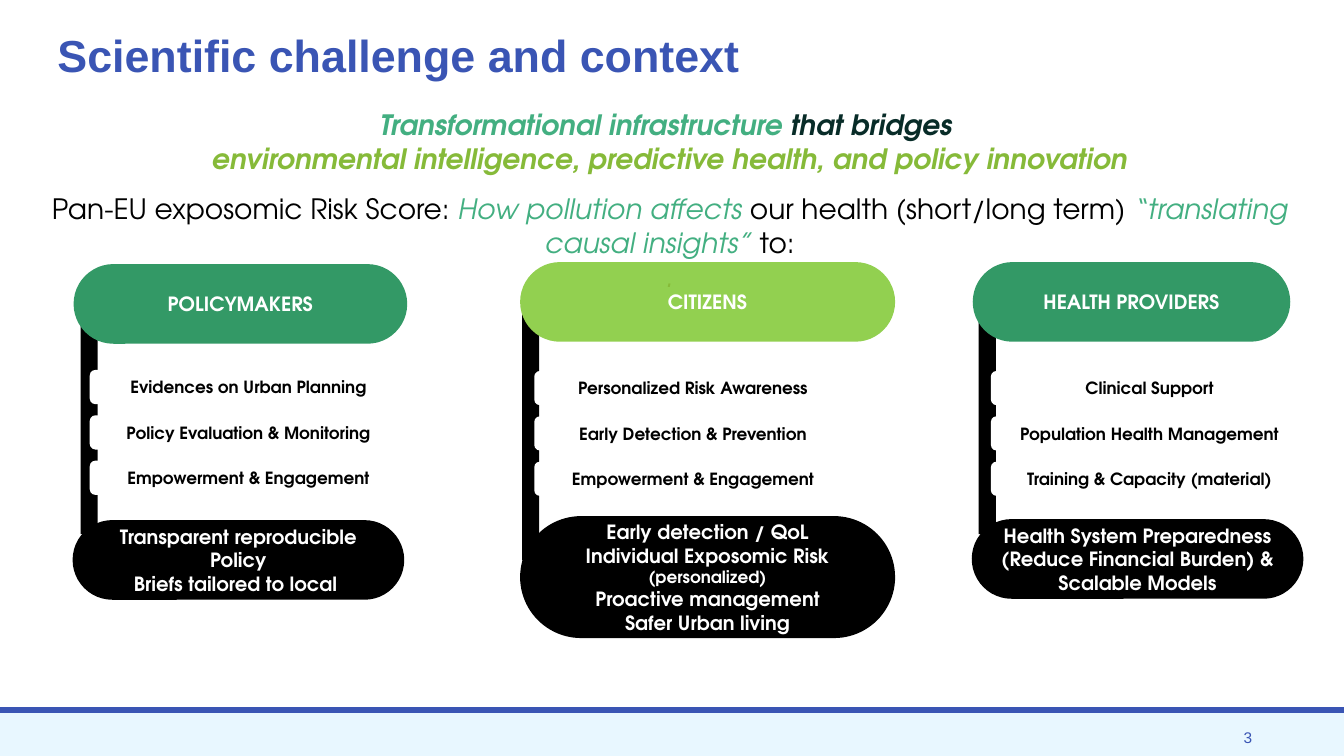
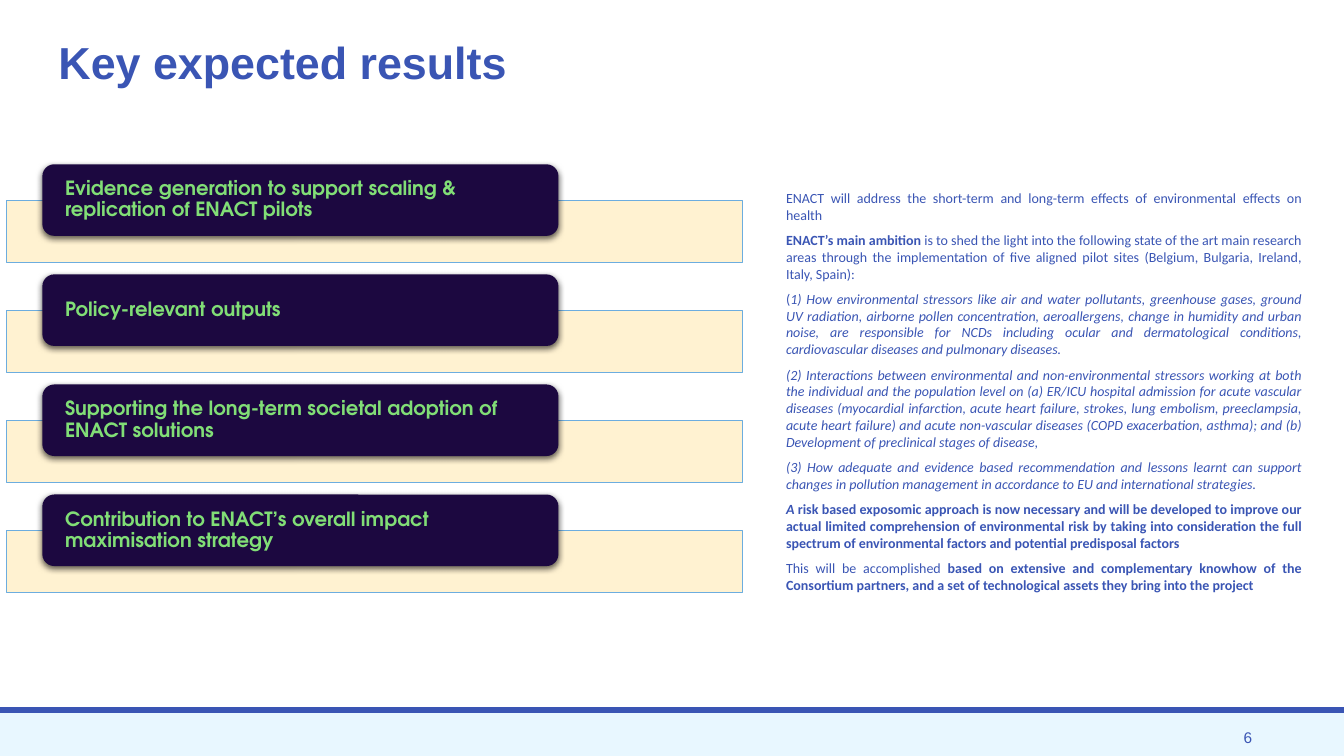
import dataclasses

import lxml.etree
import pptx
import pptx.dml.color
import pptx.enum.shapes
import pptx.enum.text
import pptx.oxml.ns
import pptx.util

SHAPE = pptx.enum.shapes.MSO_SHAPE
ALIGN = pptx.enum.text.PP_ALIGN
ANCHOR = pptx.enum.text.MSO_ANCHOR
CELLS_PER_INCH = 10
COLS, ROWS = 133.33, 75


@dataclasses.dataclass(frozen=True)
class Theme:
    blue: str = "3A55B4"
    pale_blue: str = "E8F7FF"
    black: str = "000000"
    white: str = "FFFFFF"
    green: str = "339966"
    lime: str = "92D050"
    teal: str = "43AF81"
    dark_teal: str = "082C28"
    olive: str = "86BA39"
    cream: str = "FFF1CC"
    sky: str = "6CADDF"
    night: str = "1C0840"
    mint: str = "81DE76"
    title_font: str = "Arial"
    display_font: str = "TeX Gyre Adventor"
    body_font: str = "Calibri"
    title_size: int = 32
    lead_size: int = 20
    label_size: int = 14
    item_size: int = 12
    number_size: int = 11
    body_size: int = 10


THEME = Theme()


def grid(*cells):
    """Turn grid cells into slide lengths."""
    return [pptx.util.Inches(n / CELLS_PER_INCH) for n in cells]


def rgb(color):
    return pptx.dml.color.RGBColor.from_string(color)


def add_xml(parent, tag, **attributes):
    return lxml.etree.SubElement(parent, pptx.oxml.ns.qn(tag), attributes)


class Deck:
    """Holds the theme, the presentation and the slide being built."""

    def __init__(self, theme):
        self.theme = theme
        self.prs = pptx.Presentation()
        self.prs.slide_width, self.prs.slide_height = grid(COLS, ROWS)
        self.s = None

    def slide(self, title, number, title_at):
        t = self.theme
        self.s = self.prs.slides.add_slide(self.prs.slide_layouts[6])
        self.box((0, 70.6, COLS, 4.4), t.pale_blue)
        self.box((0, 70.2, COLS, 0.5), t.blue, line=(t.blue, 1))
        self.text((96.8, 71.7, 28.4, 3), [number], align=ALIGN.RIGHT,
                  font=t.title_font, size=t.number_size, color=t.blue)
        self.text((*title_at, 118.4, 5.3), [title], anchor=ANCHOR.MIDDLE,
                  inset=0, spacing=0.9, font=t.title_font,
                  size=t.title_size, color=t.blue, bold=True)

    def box(self, at, fill, kind=SHAPE.RECTANGLE, line=None, round_ends=False,
            opacity=None):
        sp = self.s.shapes.add_shape(kind, *grid(*at))
        sp.shadow.inherit = False
        sp.fill.solid()
        sp.fill.fore_color.rgb = rgb(fill)
        if line:
            color, width = line
            sp.line.color.rgb = rgb(color)
            sp.line.width = pptx.util.Pt(width)
        else:
            sp.line.fill.background()
        if round_ends:
            sp.adjustments[0] = 0.5
        if opacity:
            fill_xml = sp._element.spPr.find(pptx.oxml.ns.qn("a:solidFill"))
            add_xml(fill_xml[0], "a:alpha", val=str(opacity * 1000))
        return sp

    def label(self, at, fill, paragraphs, color, size, round_ends=False):
        """Rounded box with centred bold text."""
        sp = self.box(at, fill, SHAPE.ROUNDED_RECTANGLE, round_ends=round_ends)
        self.fill_text(sp.text_frame, paragraphs, align=ALIGN.CENTER,
                       anchor=ANCHOR.MIDDLE, font=self.theme.display_font,
                       size=size, color=color, bold=True)

    def card(self, at, text):
        """Rounded box with left-aligned text and a soft shadow below."""
        t = self.theme
        sp = self.box(at, t.night, SHAPE.ROUNDED_RECTANGLE)
        effects = sp._element.spPr.find(pptx.oxml.ns.qn("a:effectLst"))
        shadow = add_xml(effects, "a:outerShdw", blurRad=str(pptx.util.Pt(4.5)),
                         dist=str(pptx.util.Pt(1.5)), dir="5400000",
                         algn="ctr", rotWithShape="0")
        color = add_xml(shadow, "a:srgbClr", val=t.black)
        add_xml(color, "a:alpha", val="63000")
        self.fill_text(sp.text_frame, [text], anchor=ANCHOR.MIDDLE, inset=1.9,
                       spacing=0.9, font=t.display_font, size=t.label_size,
                       color=t.mint, bold=True)

    def text(self, at, paragraphs, **style):
        tb = self.s.shapes.add_textbox(*grid(*at))
        self.fill_text(tb.text_frame, paragraphs, **style)

    def fill_text(self, tf, paragraphs, align=ALIGN.LEFT, anchor=ANCHOR.TOP,
                  inset=None, spacing=None, before=None, after=None, **font):
        """Fill a frame; a paragraph is a string or a list of (text, changes).

        before maps a paragraph's index to the points above it.
        """
        tf.word_wrap = True
        tf.vertical_anchor = anchor
        if inset is not None:
            tf.margin_left = tf.margin_right = grid(inset)[0]
            tf.margin_top = tf.margin_bottom = 0
        for i, runs in enumerate(paragraphs):
            p = tf.paragraphs[0] if i == 0 else tf.add_paragraph()
            p.alignment = align
            if spacing:
                p.line_spacing = spacing
            if before and i in before:
                p.space_before = pptx.util.Pt(before[i])
            if after:
                p.space_after = pptx.util.Pt(after)
            if isinstance(runs, str):
                runs = [(runs, {})]
            for text, changes in runs:
                self.run(p, text, **{**font, **changes})

    def run(self, p, text, font, size, color, bold=False, italic=False):
        r = p.add_run()
        r.text = text
        r.font.name = font
        r.font.size = pptx.util.Pt(size)
        r.font.color.rgb = rgb(color)
        r.font.bold = bold
        r.font.italic = italic

    def audience(self, bar, head, head_fill, name, items_at, items, outcome,
                 results):
        """Heading and outcome joined by a bar, with items between them."""
        t = self.theme
        self.box(bar, t.black)
        left, top = items_at
        for i, item in enumerate(items):
            self.label((left, top + 4.5 * i, 31.5, 3.4), t.white, [item],
                       t.black, t.item_size)
        self.label(head, head_fill, [name], t.white, t.label_size, True)
        self.label(outcome, t.black, results, t.white, t.label_size, True)


def challenge_slide(deck):
    t = deck.theme
    deck.slide("Scientific challenge and context", "3", (5.7, 3.1))
    deck.audience(
        (8, 31.2, 1.7, 21.8), (7.3, 26.2, 33.1, 7.9), t.green, "POLICYMAKERS",
        (8.9, 36.7),
        ["Evidences on Urban Planning", "Policy Evaluation & Monitoring",
         "Empowerment & Engagement"],
        (7.2, 51.6, 32.9, 7.9),
        ["Transparent reproducible Policy", "Briefs tailored to local "])
    deck.audience(
        (51.8, 31.2, 1.7, 24.4), (51.6, 26, 37.2, 7.9), t.lime, "CITIZENS",
        (53, 36.8),
        ["Personalized Risk Awareness", "Early Detection & Prevention",
         "Empowerment & Engagement"],
        (51.6, 51.2, 37.2, 12.1),
        ["Early detection / QoL",
         [("Individual Exposomic Risk ", {}),
          ("(personalized)", {"size": t.item_size})],
         "Proactive management", "Safer Urban living"])
    deck.audience(
        (97.1, 31.2, 1.7, 21.8), (96.5, 26, 31.5, 7.9), t.green,
        "HEALTH PROVIDERS", (98.3, 36.8),
        ["Clinical Support", "Population Health Management",
         "Training & Capacity (material)"],
        (96.4, 51.5, 32.9, 7.9),
        ["Health System Preparedness (Reduce Financial Burden) & "
         "Scalable Models"])

    strong = {"bold": True, "italic": True}
    accent = {"color": t.teal, "italic": True}
    deck.text(
        (0, 10.2, 132.9, 19.5),
        [[("Transformational infrastructure ", {**strong, "color": t.teal}),
          ("that bridges ", {**strong, "color": t.dark_teal})],
         [("environmental intelligence, predictive health, and policy "
           "innovation", {**strong, "color": t.olive})],
         [("Pan-EU exposomic Risk Score: ", {}),
          ("How pollution affects ", accent),
          ("our health (short/long term) ", {}),
          ("“translating causal insights” ", accent),
          ("to:", {})],
         [(".", {"color": t.olive, "italic": True})]],
        align=ALIGN.CENTER, before={2: 12}, font=t.display_font,
        size=t.lead_size, color=t.black)


def results_slide(deck):
    t = deck.theme
    deck.slide("Key expected results", "6", (5.8, 3.8))
    results = [
        "Evidence generation to support scaling & replication of ENACT pilots",
        "Policy-relevant outputs",
        "Supporting the long-term societal adoption of ENACT solutions",
        "Contribution to ENACT’s overall impact maximisation strategy",
    ]
    for i, result in enumerate(results):
        top = 16.3 + 10.92 * i
        deck.box((0.6, top + 3.6, 73.1, 6.1), t.cream, line=(t.sky, 0.5),
                 opacity=90)
        deck.card((4.2, top, 51.2, 7.1), result)

    bold, italic = {"bold": True}, {"italic": True}
    deck.text(
        (77, 18.3, 53.1, 41.4),
        ["ENACT will address the short-term and long-term effects of "
         "environmental effects on health",
         [("ENACT’s main ambition", bold),
          (" is to shed the light into the following state of the art main "
           "research areas through the implementation of five aligned pilot "
           "sites (Belgium, Bulgaria, Ireland, Italy, Spain):", {})],
         [("(", {}),
          ("1) How environmental stressors like air and water pollutants, "
           "greenhouse gases, ground UV radiation, airborne pollen "
           "concentration, aeroallergens, change in humidity and urban noise, "
           "are responsible for NCDs including ocular and dermatological "
           "conditions, cardiovascular diseases and pulmonary diseases.",
           italic)],
         [("(2) Interactions between environmental and non-environmental "
           "stressors working at both the individual and the population level "
           "on (a) ER/ICU hospital admission for acute vascular diseases "
           "(myocardial infarction, acute heart failure, strokes, lung "
           "embolism, preeclampsia, acute heart failure) and acute "
           "non-vascular diseases (COPD exacerbation, asthma); and (b) "
           "Development of preclinical stages of disease,", italic)],
         [("(3) How adequate and evidence based recommendation and lessons "
           "learnt can support changes in pollution management in accordance "
           "to EU and international strategies.", italic)],
         [("A", {**bold, **italic}),
          (" risk based exposomic approach is now necessary and will be "
           "developed to improve our actual limited comprehension of "
           "environmental risk by taking into consideration the full spectrum "
           "of environmental factors and potential predisposal factors",
           bold)],
         [("This will be accomplished ", {}),
          ("based on extensive and complementary knowhow of the Consortium "
           "partners, and a set of technological assets they bring into the "
           "project ", bold)]],
        align=ALIGN.JUSTIFY, after=6, font=t.body_font, size=t.body_size,
        color=t.blue)


def main():
    deck = Deck(THEME)
    challenge_slide(deck)
    results_slide(deck)
    deck.prs.save("out.pptx")


if __name__ == "__main__":
    main()
